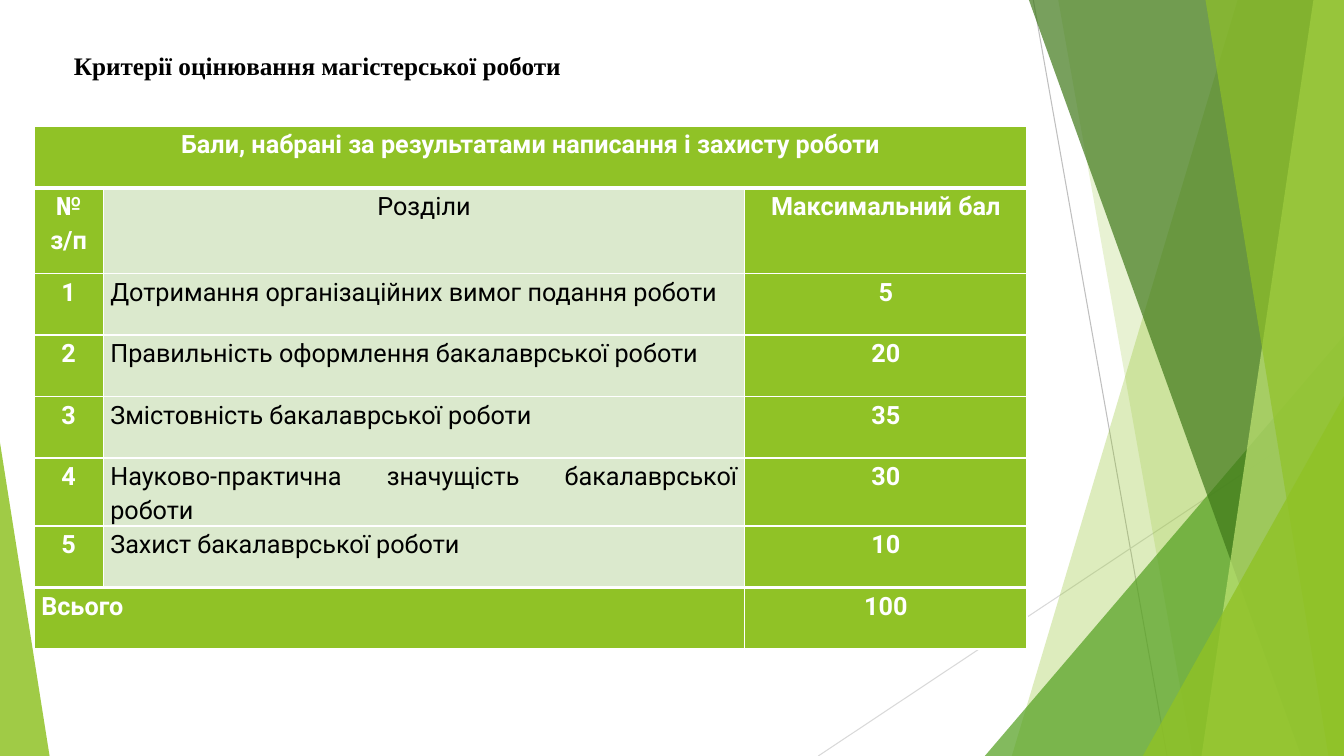
import pptx
import pptx.util
import pptx.dml.color
import pptx.enum.shapes
import pptx.enum.text
import pptx.oxml.ns
from lxml import etree

Cm, Pt = pptx.util.Cm, pptx.util.Pt
RGB = pptx.dml.color.RGBColor.from_string
qn = pptx.oxml.ns.qn
SHAPE = pptx.enum.shapes.MSO_SHAPE
ALIGN = pptx.enum.text.PP_ALIGN

W, H = 33.87, 19.05
COLORS = {
    "green": "90C226", "leaf": "54A021", "forest": "3F7819", "lime": "C0E474",
    "pale": "DBE9CD", "white": "FFFFFF", "black": "000000",
    "grey": "BFBFBF", "silver": "D9D9D9",
}


def paint(sp, color, opacity):
    """Fill a shape with a see-through colour, without line or shadow."""
    sp.shadow.inherit = False
    sp.line.fill.background()
    sp.fill.solid()
    sp.fill.fore_color.rgb = RGB(COLORS[color])
    clr = sp.fill._xPr.find(qn("a:solidFill"))[0]
    etree.SubElement(clr, qn("a:alpha")).set("val", str(opacity * 1000))


def set_border(cell, side, width):
    ln = etree.SubElement(cell._tc.get_or_add_tcPr(), qn("a:ln" + side))
    ln.set("w", str(Pt(width)))
    fill = etree.SubElement(ln, qn("a:solidFill"))
    etree.SubElement(fill, qn("a:srgbClr")).set("val", COLORS["white"])


prs = pptx.Presentation()
prs.slide_width, prs.slide_height = Cm(W), Cm(H)
s = prs.slides.add_slide(prs.slide_layouts[6])

# Thin background lines
for x1, y1, x2, y2, color in [
    (26.04, 0, 29.41, H, "grey"),
    (W, 10.24, 20.62, H, "silver"),
]:
    line = s.shapes.add_connector(pptx.enum.shapes.MSO_CONNECTOR.STRAIGHT,
                                  Cm(x1), Cm(y1), Cm(x2), Cm(y2))
    line.line.color.rgb = RGB(COLORS[color])
    line.line.width = Pt(0.75)
    etree.SubElement(line._element.spPr, qn("a:effectLst"))

# Panes take the x of the slanted edge at top and bottom;
# triangles take left, top, width, height and the apex position.
for geometry, color, opacity in [
    ((31.19, 25.5), "green", 30),
    ((26.67, 30.05), "green", 20),
    ((24.82, 8.46, 9.05, 10.59, 1), "leaf", 72),
    ((25.93, 32.79), "forest", 70),
    ((33.1, 30.28), "lime", 70),
    ((30.38, 33.48), "green", 65),
    ((28.8, 9.98, 5.07, 9.07, 1), "green", 80),
    ((0, 11.15, 1.25, 7.9, 0), "green", 85),
]:
    if len(geometry) == 2:
        top_x, bottom_x = geometry
        pane = s.shapes.build_freeform(Cm(top_x), Cm(0))
        pane.add_line_segments([(Cm(W), Cm(0)), (Cm(W), Cm(H)), (Cm(bottom_x), Cm(H))])
        sp = pane.convert_to_shape()
    else:
        *box, apex = geometry
        sp = s.shapes.add_shape(SHAPE.ISOSCELES_TRIANGLE, *map(Cm, box))
        sp.adjustments[0] = apex
    paint(sp, color, opacity)

# Table of marks
rows = [
    ("Бали, набрані за результатами написання і захисту роботи", "", ""),
    ("№ з/п", "Розділи", "Максимальний бал"),
    ("1", "Дотримання організаційних вимог подання роботи", "5"),
    ("2", "Правильність оформлення бакалаврської роботи", "20"),
    ("3", "Змістовність бакалаврської роботи", "35"),
    ("4", "Науково-практична значущість бакалаврської роботи", "30"),
    ("5", "Захист бакалаврської роботи", "10"),
    ("Всього", "", "100"),
]
col_widths = [1.74, 16.17, 7.11]
row_heights = [1.55, 2.16] + [1.55] * 6
last = len(rows) - 1
table = s.shapes.add_table(len(rows), 3, Cm(0.86), Cm(3.18),
                           Cm(sum(col_widths)), Cm(sum(row_heights))).table
for col, width in zip(table.columns, col_widths):
    col.width = Cm(width)
for row, height in zip(table.rows, row_heights):
    row.height = Cm(height)
table.cell(0, 0).merge(table.cell(0, 2))
table.cell(last, 0).merge(table.cell(last, 1))

for i, texts in enumerate(rows):
    for j, text in enumerate(texts):
        cell = table.cell(i, j)
        section = j == 1 and 0 < i < last
        cell.margin_left = cell.margin_right = Cm(0.18)
        cell.margin_top = cell.margin_bottom = 0
        for side, width in [("L", 1), ("R", 1),
                            ("T", 3 if i in (1, last) else 1),
                            ("B", 3 if i in (0, last - 1) else 1)]:
            set_border(cell, side, width)
        cell.fill.solid()
        cell.fill.fore_color.rgb = RGB(COLORS["pale" if section else "green"])
        if not text:
            continue
        p = cell.text_frame.paragraphs[0]
        p.text = text
        justified = (section and i > 1) or (i == last and j == 0)
        p.alignment = ALIGN.JUSTIFY if justified else ALIGN.CENTER
        p.line_spacing = 1.15
        font = p.runs[0].font
        font.name, font.size, font.bold = "Roboto", Pt(18), not section
        font.color.rgb = RGB(COLORS["black" if section else "white"])

# Title
title = s.shapes.add_textbox(Cm(1.55), Cm(0.76), Cm(12.9), Cm(1.27))
tf = title.text_frame
tf.word_wrap = False
tf.auto_size = pptx.enum.text.MSO_AUTO_SIZE.SHAPE_TO_FIT_TEXT
p = tf.paragraphs[0]
p.text = "Критерії оцінювання магістерської роботи"
p.alignment = ALIGN.CENTER
p.line_spacing = 1.5
font = p.runs[0].font
font.name, font.size, font.bold = "Times New Roman", Pt(18), True
font.color.rgb = RGB(COLORS["black"])

prs.save("out.pptx")
